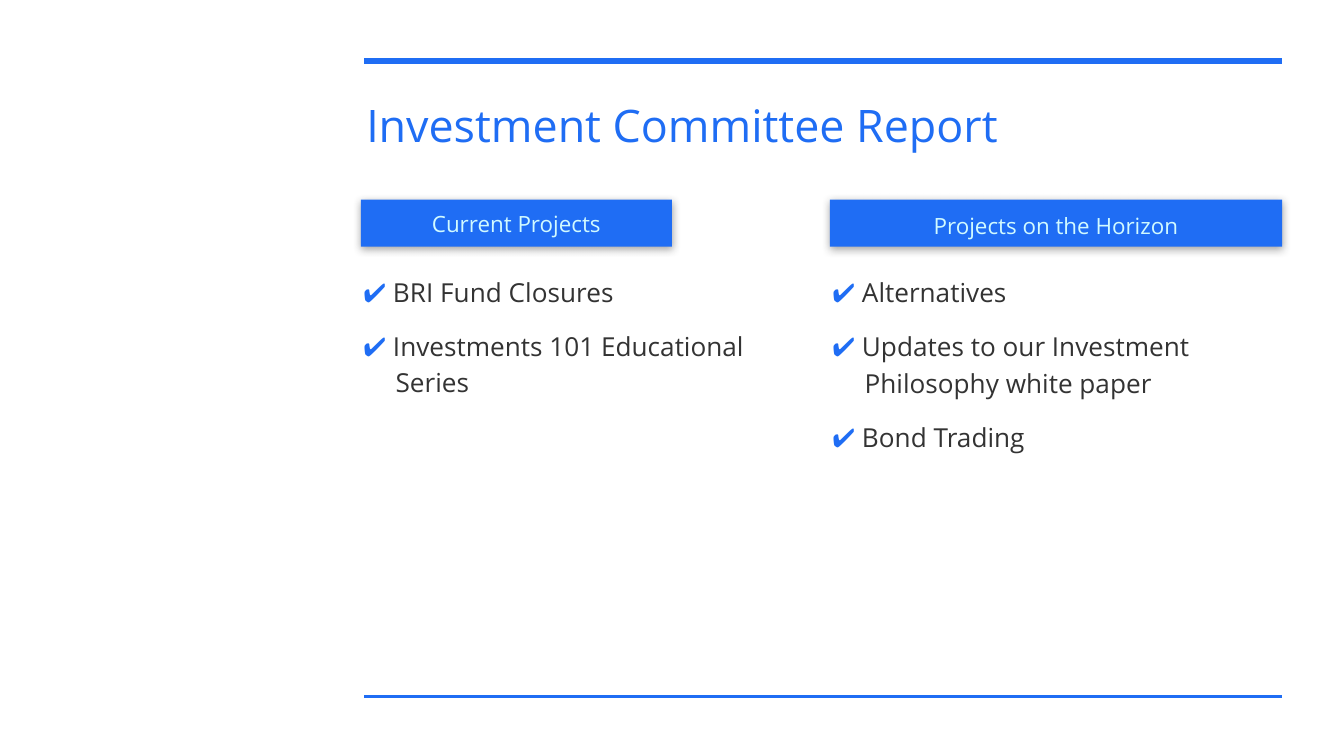
from dataclasses import dataclass

from lxml import etree
from pptx import Presentation
from pptx.dml.color import RGBColor
from pptx.enum.shapes import MSO_CONNECTOR, MSO_SHAPE
from pptx.enum.text import MSO_ANCHOR, MSO_AUTO_SIZE, PP_ALIGN
from pptx.oxml.ns import qn
from pptx.util import Pt

STRAIGHT = MSO_CONNECTOR.STRAIGHT
RECTANGLE = MSO_SHAPE.RECTANGLE
TOP, MIDDLE = MSO_ANCHOR.TOP, MSO_ANCHOR.MIDDLE
LEFT, CENTER = PP_ALIGN.LEFT, PP_ALIGN.CENTER
FIXED_SIZE = MSO_AUTO_SIZE.NONE

EMU_PER_PX = 4572
SLIDE_WIDTH, SLIDE_HEIGHT = 2000, 1125
TITLE_ONLY = 5


@dataclass(frozen=True)
class Theme:
    font: str = "Open Sans"
    accent: str = "1F6DF4"
    ink: str = "333333"
    label: str = "D1FAFF"
    title_size: int = 24
    label_size: int = 12
    item_size: int = 14
    spacing: float = 1.15


@dataclass(frozen=True)
class Box:
    left: int
    top: int
    width: int
    height: int


@dataclass(frozen=True)
class Column:
    heading: str
    heading_box: Box
    heading_spacing: float
    items: tuple[str, ...]
    items_box: Box


THEME = Theme()
TITLE_BOX = Box(525, 126, 1382, 138)
RULE_LEFT, RULE_RIGHT = 542, 1908
RULES = ((91, 3), (1037, 1.5))
INSET = 20
HANGING = 48
COLUMNS = (
    Column(
        "Projects on the Horizon",
        Box(1235, 297, 673, 70),
        THEME.spacing,
        ("Alternatives", "Updates to our Investment Philosophy white paper", "Bond Trading"),
        Box(1219, 384, 694, 544),
    ),
    Column(
        "Current Projects",
        Box(537, 297, 463, 70),
        1.0,
        ("BRI Fund Closures", "Investments 101 Educational Series"),
        Box(521, 384, 662, 600),
    ),
)


def px(length: int) -> int:
    return length * EMU_PER_PX


def frame(box: Box) -> tuple[int, ...]:
    return px(box.left), px(box.top), px(box.width), px(box.height)


def prepare_text(shape, anchor):
    text = shape.text_frame
    text.word_wrap = True
    text.auto_size = FIXED_SIZE
    text.vertical_anchor = anchor
    text.margin_left = text.margin_right = px(INSET)
    text.margin_top = text.margin_bottom = px(INSET)
    return text


def add_span(para, text: str, *, size: int, color: str) -> None:
    span = para.add_run()
    span.text = text
    span.font.name = THEME.font
    span.font.size = Pt(size)
    span.font.color.rgb = RGBColor.from_string(color)


def add_rule(slide, top: int, weight: float) -> None:
    rule = slide.shapes.add_connector(STRAIGHT, px(RULE_LEFT), px(top), px(RULE_RIGHT), px(top))
    rule.line.color.rgb = RGBColor.from_string(THEME.accent)
    rule.line.width = Pt(weight)
    etree.SubElement(rule._element.spPr, qn("a:effectLst"))


def add_soft_shadow(shape) -> None:
    shape.shadow.inherit = False
    effects = shape._element.spPr.find(qn("a:effectLst"))
    shadow = etree.SubElement(
        effects, qn("a:outerShdw"), blurRad=str(Pt(4.5)), dist=str(Pt(1.5)),
        dir="5400000", algn="bl", rotWithShape="0",
    )
    color = etree.SubElement(shadow, qn("a:srgbClr"), val=THEME.ink)
    etree.SubElement(color, qn("a:alpha"), val="43000")


def add_title(slide, text: str) -> None:
    title = slide.shapes.title
    title.left, title.top, title.width, title.height = frame(TITLE_BOX)
    para = prepare_text(title, TOP).paragraphs[0]
    para.alignment = LEFT
    add_span(para, text, size=THEME.title_size, color=THEME.accent)


def add_heading(slide, column: Column) -> None:
    banner = slide.shapes.add_shape(RECTANGLE, *frame(column.heading_box))
    banner.fill.solid()
    banner.fill.fore_color.rgb = RGBColor.from_string(THEME.accent)
    banner.line.fill.background()
    add_soft_shadow(banner)
    para = prepare_text(banner, MIDDLE).paragraphs[0]
    para.alignment = CENTER
    para.line_spacing = column.heading_spacing
    add_span(para, column.heading, size=THEME.label_size, color=THEME.label)


def add_checklist(slide, column: Column) -> None:
    text = prepare_text(slide.shapes.add_textbox(*frame(column.items_box)), TOP)
    for index, item in enumerate(column.items):
        para = text.add_paragraph() if index else text.paragraphs[0]
        properties = para._p.get_or_add_pPr()
        properties.set("marL", str(px(HANGING)))
        properties.set("indent", str(-px(HANGING)))
        para.line_spacing = THEME.spacing
        if index:
            para.space_before = Pt(10)
        add_span(para, "✔ ", size=THEME.item_size, color=THEME.accent)
        add_span(para, item, size=THEME.item_size, color=THEME.ink)


def main() -> None:
    deck = Presentation()
    deck.slide_width, deck.slide_height = px(SLIDE_WIDTH), px(SLIDE_HEIGHT)
    slide = deck.slides.add_slide(deck.slide_layouts[TITLE_ONLY])
    for top, weight in RULES:
        add_rule(slide, top, weight)
    add_title(slide, "Investment Committee Report")
    for column in COLUMNS:
        add_heading(slide, column)
        add_checklist(slide, column)
    deck.save("out.pptx")


if __name__ == "__main__":
    main()
